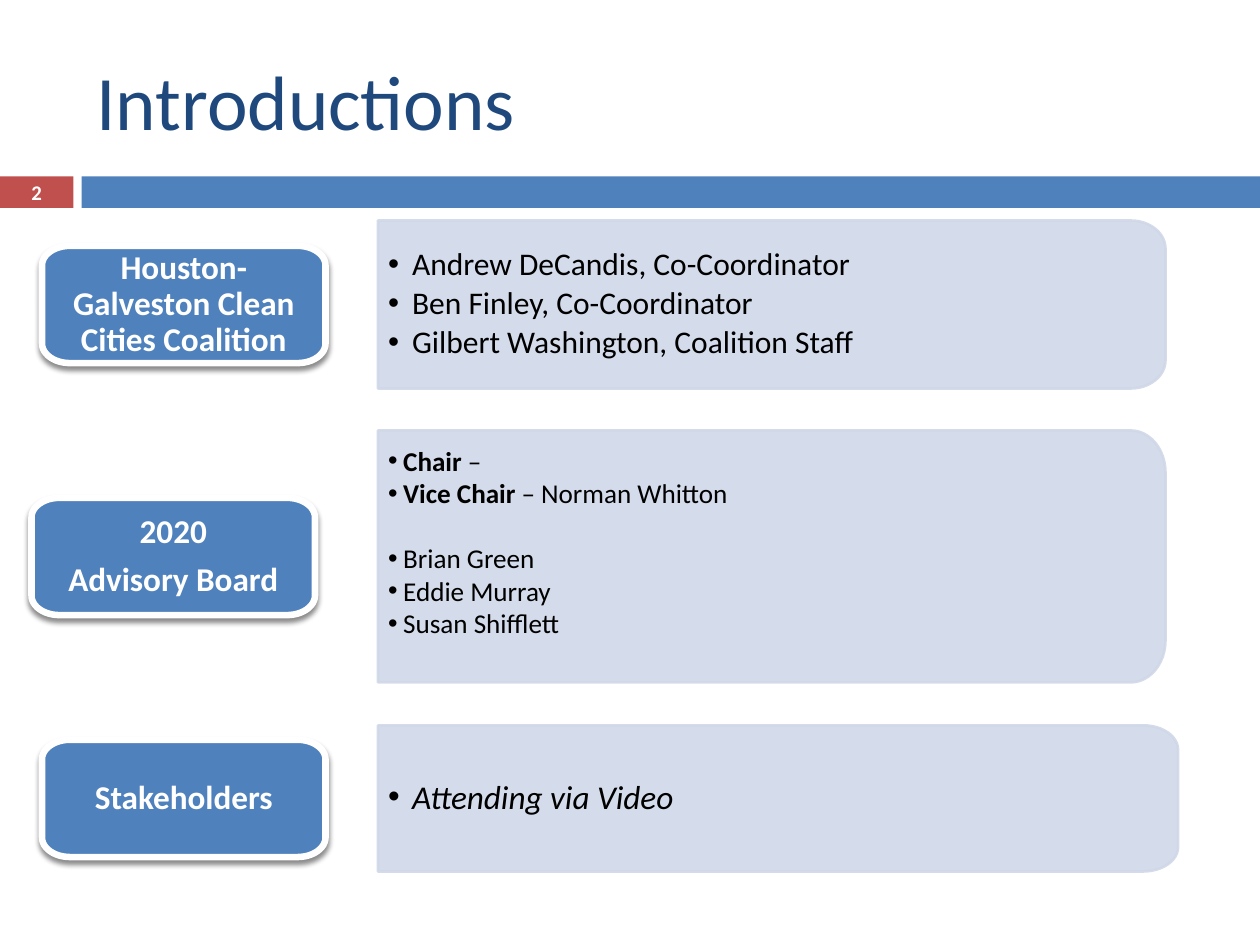
import math

from lxml import etree
from pptx import Presentation
from pptx.dml.color import RGBColor
from pptx.enum.shapes import MSO_SHAPE
from pptx.enum.text import MSO_ANCHOR, PP_ALIGN
from pptx.oxml.ns import qn
from pptx.util import Pt

RECTANGLE = MSO_SHAPE.RECTANGLE
MIDDLE = MSO_ANCHOR.MIDDLE
LEFT, CENTER = PP_ALIGN.LEFT, PP_ALIGN.CENTER

NAVY = RGBColor(0x1F, 0x49, 0x7D)
BLUE = RGBColor(0x4F, 0x81, 0xBD)
RED = RGBColor(0xC0, 0x50, 0x4D)
PALE = RGBColor(0xD0, 0xD8, 0xE8)
WHITE = RGBColor(0xFF, 0xFF, 0xFF)
BLACK = RGBColor(0, 0, 0)

PANEL_LEFT = 216
LABEL_WIDTH, LABEL_HEIGHT = 162, 67
CORNER_STEPS = 12

prs = Presentation()
prs.slide_width, prs.slide_height = Pt(720), Pt(540)
slide = prs.slides.add_slide(prs.slide_layouts[5])


def add_block(left, top, width, height, corner, round_left, fill, line, line_width, insets):
    """Draw a box with elliptical corners, all round or on the right side only."""
    points = []
    for right, bottom, start in ((1, 0, -90), (1, 1, 0), (0, 1, 90), (0, 0, 180)):
        rounded = right or round_left
        rx, ry = (corner, height / 6) if rounded else (0, 0)
        cx = left + width - rx if right else left + rx
        cy = top + height - ry if bottom else top + ry
        for step in range(CORNER_STEPS + 1 if rounded else 1):
            angle = math.radians(start + 90 * step / CORNER_STEPS)
            points.append((Pt(cx + rx * math.cos(angle)), Pt(cy + ry * math.sin(angle))))
    builder = slide.shapes.build_freeform(*points[0])
    builder.add_line_segments(points[1:], close=True)
    block = builder.convert_to_shape()
    block.shadow.inherit = False
    block.fill.solid()
    block.fill.fore_color.rgb = fill
    block.line.color.rgb = line
    block.line.width = Pt(line_width)
    frame = block.text_frame
    frame.word_wrap = True
    frame.vertical_anchor = MIDDLE
    for side, inset in zip(("left", "top", "right", "bottom"), insets):
        setattr(frame, f"margin_{side}", Pt(inset))
    return block


def write_line(frame, index, runs, size, color, spacing, indent=0):
    """Fill one paragraph; runs are (text, font values), indent adds a bullet."""
    paragraph = frame.paragraphs[0] if index == 0 else frame.add_paragraph()
    for name, value in spacing.items():
        setattr(paragraph, name, value)
    if indent:
        props = paragraph._p.get_or_add_pPr()
        props.set("marL", str(Pt(indent)))
        props.set("indent", str(-Pt(indent)))
        etree.SubElement(props, qn("a:buFont")).set("typeface", "Arial")
        etree.SubElement(props, qn("a:buChar")).set("char", "•")
    for text, style in runs:
        run = paragraph.add_run()
        run.text = text
        run.font.color.rgb = color
        for name, value in {"name": "Calibri", "size": Pt(size), **style}.items():
            setattr(run.font, name, value)


# Header bars with the slide number
for left, width, color in ((0, 42, RED), (46.6, 673.4, BLUE)):
    bar = slide.shapes.add_shape(RECTANGLE, Pt(left), Pt(100.8), Pt(width), Pt(18))
    bar.shadow.inherit = False
    bar.fill.solid()
    bar.fill.fore_color.rgb = color
    bar.line.fill.background()

page_number = slide.shapes.add_textbox(0, Pt(100.2), Pt(42), Pt(19.2)).text_frame
page_number.word_wrap = True
page_number.vertical_anchor = MIDDLE
page_number.margin_top = page_number.margin_bottom = 0
write_line(page_number, 0, [("2", {"bold": True})], 11.9, WHITE, {"alignment": CENTER})

# Title
title = slide.shapes.title
title.left, title.top, title.width, title.height = Pt(48), Pt(18), Pt(642), Pt(78)
title.text_frame.vertical_anchor = MIDDLE
write_line(title.text_frame, 0, [("Introductions", {})], 44, NAVY, {"alignment": LEFT})

# Groups: panel of people on the right, label centred beside it
BOLD, PLAIN, ITALIC = {"bold": True}, {"bold": False}, {"italic": True}
LISTED = {"alignment": LEFT, "line_spacing": 0.9, "space_after": Pt(2.8)}
BOARD = {"alignment": LEFT}
HEADING = {"alignment": CENTER, "line_spacing": 0.9, "space_after": Pt(6.65)}

groups = [
    {"label": ["Houston-Galveston Clean Cities Coalition"], "label_left": 24,
     "top": 126, "width": 450, "height": 96, "size": 18, "indent": 13.7, "bottom": 7.2,
     "lines": [([("Andrew DeCandis, Co-Coordinator", {})], LISTED),
               ([("Ben Finley, Co-Coordinator", {})], LISTED),
               ([("Gilbert Washington, Coalition Staff", {})], LISTED)]},
    {"label": ["2020", "Advisory Board"], "label_left": 18,
     "top": 246, "width": 450, "height": 144, "size": 15.5, "indent": 8.6, "bottom": 24,
     "lines": [([("Chair", BOLD), (" –", PLAIN)], BOARD),
               ([("Vice Chair ", BOLD), ("– Norman Whitton", PLAIN)], BOARD),
               ([("Brian Green", {})], {**BOARD, "space_before": Pt(18.6)}),
               ([("Eddie Murray", {})], BOARD),
               ([("Susan Shifflett", {})], BOARD)]},
    {"label": ["Stakeholders"], "label_left": 24,
     "top": 414.5, "width": 457.2, "height": 83.5, "size": 19, "indent": 13.7, "bottom": 7.2,
     "lines": [([("Attending via Video", ITALIC)], LISTED)]},
]

for group in groups:
    panel = add_block(PANEL_LEFT, group["top"], group["width"], group["height"], 20, False,
                      PALE, PALE, 1.5, (5.8, 7.2, 10, group["bottom"]))
    for tint in panel._element.spPr.iter(qn("a:srgbClr")):
        etree.SubElement(tint, qn("a:alpha")).set("val", "90000")
    for index, (runs, spacing) in enumerate(group["lines"]):
        write_line(panel.text_frame, index, runs, group["size"], BLACK, spacing, group["indent"])

    label_top = group["top"] + (group["height"] - LABEL_HEIGHT) / 2
    label = add_block(group["label_left"], label_top, LABEL_WIDTH, LABEL_HEIGHT, 16, True,
                      BLUE, WHITE, 3.75, (10.8, 7.9, 10.8, 7.9))
    effects = label._element.spPr.find(qn("a:effectLst"))
    shadow = etree.SubElement(effects, qn("a:outerShdw"), blurRad=str(Pt(3)),
                              dist=str(Pt(2.4)), dir="5400000", rotWithShape="0")
    shade = etree.SubElement(shadow, qn("a:srgbClr"), val=str(BLACK))
    etree.SubElement(shade, qn("a:alpha")).set("val", "45000")
    for index, text in enumerate(group["label"]):
        write_line(label.text_frame, index, [(text, BOLD)], 19, WHITE, HEADING)

prs.save("out.pptx")
